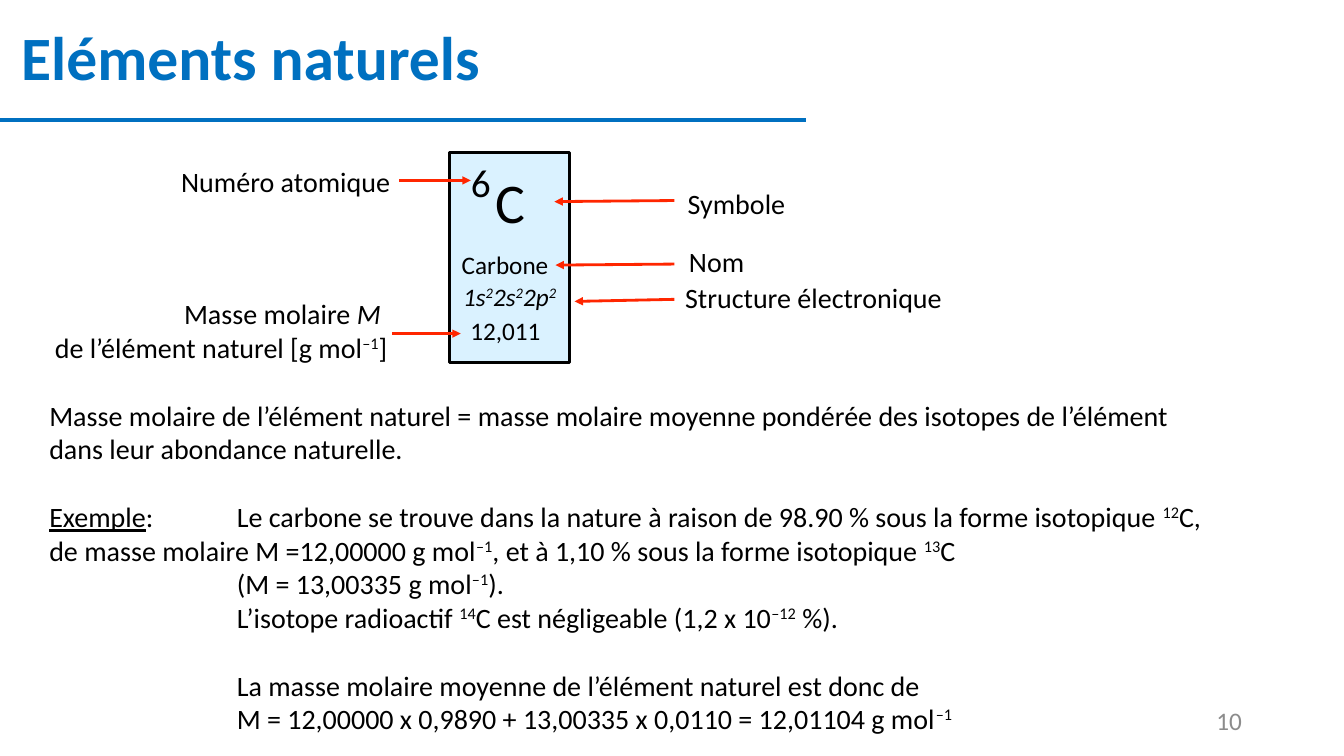
from dataclasses import dataclass

from lxml.etree import SubElement
from pptx import Presentation
from pptx.dml.color import RGBColor
from pptx.enum.shapes import MSO_CONNECTOR as Connector, MSO_SHAPE as Preset
from pptx.enum.text import MSO_ANCHOR as Anchor, MSO_AUTO_SIZE as AutoSize, PP_ALIGN as Align
from pptx.oxml.ns import qn
from pptx.util import Inches, Pt

FONT = "Calibri"
COLORS = {"blue": "0070C0", "black": "000000", "gray": "8C8C8C",
          "tile": "C8ECFF", "red": "FF2600"}
WIDTH, HEIGHT = Inches(13.333), Inches(7.5)
TAB_STOP = Inches(1.86)
LINE_GAP = Pt(24.4)  # height of one 20-point line


# Places are percentages of the slide's width and height.
@dataclass(frozen=True)
class Box:
    left: float
    top: float
    width: float
    height: float

    def lengths(self) -> tuple[int, int, int, int]:
        return across(self.left), down(self.top), across(self.width), down(self.height)


@dataclass(frozen=True)
class Label:
    text: str
    box: Box
    size: int = 20
    align: Align = Align.CENTER
    italic: bool = False
    wrap: bool = True


@dataclass(frozen=True)
class Arrow:
    tip: tuple[float, float]
    tail: tuple[float, float]


def across(percent: float) -> int:
    return round(WIDTH * percent / 100)


def down(percent: float) -> int:
    return round(HEIGHT * percent / 100)


def color(name: str) -> RGBColor:
    return RGBColor.from_string(COLORS[name])


def write_text(paragraph, text: str, *, size: int = 20, color_name: str = "black",
               align: Align = Align.LEFT, bold: bool = False, italic: bool = False) -> None:
    """Parts are split by |; a leading ^ raises, / slants, ~ underlines; \\v breaks the line."""
    paragraph.alignment = align
    for part in text.split("|"):
        if part == "\v":
            paragraph.add_line_break()
            continue
        mark = part[0] if part[0] in "^/~" else ""
        run = paragraph.add_run()
        run.text = part[len(mark):]
        font = run.font
        font.name, font.size, font.bold = FONT, Pt(size), bold
        font.italic = italic or mark == "/"
        font.underline = mark == "~"
        font.color.rgb = color(color_name)
        if mark == "^":
            run._r.get_or_add_rPr().set("baseline", "31000")


def add_frame(slide, box: Box, *, inset: float | None = None, wrap: bool = True,
              anchor: Anchor = Anchor.MIDDLE):
    frame = slide.shapes.add_textbox(*box.lengths()).text_frame
    frame.word_wrap = wrap
    frame.auto_size = AutoSize.SHAPE_TO_FIT_TEXT
    frame.vertical_anchor = anchor
    if inset is not None:
        frame.margin_left = frame.margin_right = Inches(inset)
        frame.margin_top = frame.margin_bottom = Inches(inset)
    return frame


def add_label(slide, label: Label) -> None:
    frame = add_frame(slide, label.box, inset=0.06, wrap=label.wrap)
    write_text(frame.paragraphs[0], label.text, size=label.size,
               align=label.align, italic=label.italic)


def add_line(slide, start: tuple[float, float], end: tuple[float, float], *,
             color_name: str, weight: float, arrow: bool = False) -> None:
    line = slide.shapes.add_connector(Connector.STRAIGHT, across(start[0]), down(start[1]),
                                      across(end[0]), down(end[1]))
    line.line.color.rgb = color(color_name)
    line.line.width = Pt(weight)
    if arrow:
        SubElement(line.line._get_or_add_ln(), qn("a:headEnd"), type="triangle")
    SubElement(line._element.spPr, qn("a:effectLst"))


def add_tile(slide, box: Box) -> None:
    tile = slide.shapes.add_shape(Preset.RECTANGLE, *box.lengths())
    tile.shadow.inherit = False
    tile.fill.solid()
    tile.fill.fore_color.rgb = color("tile")
    fill_color = tile._element.spPr.find(qn("a:solidFill")).find(qn("a:srgbClr"))
    SubElement(fill_color, qn("a:alpha"), val="66000")
    tile.line.color.rgb = color("black")
    tile.line.width = Pt(2)


def add_explanation(slide, box: Box, blocks: list[list[str]]) -> None:
    frame = add_frame(slide, box, anchor=Anchor.TOP)
    paragraph = frame.paragraphs[0]
    for block in blocks:
        for text in block:
            if paragraph.runs:
                paragraph = frame.add_paragraph()
            write_text(paragraph, text)
            if "\t" in text:
                tabs = SubElement(paragraph._p.get_or_add_pPr(), qn("a:tabLst"))
                SubElement(tabs, qn("a:tab"), pos=str(TAB_STOP), algn="l")
        if block is not blocks[-1]:
            paragraph.space_after = LINE_GAP


LABELS = [
    # Inside the tile
    Label("C", Box(36.45, 21.33, 3.08, 10.53), size=40, wrap=False),
    Label("6", Box(34.58, 20.13, 2.33, 7.73), size=28, wrap=False),
    Label("12,011", Box(34.5, 40.93, 6.23, 5.6), size=18, wrap=False),
    Label("Carbone", Box(33.9, 32.13, 7.35, 5.6), size=18, wrap=False),
    Label("1s|^2|2s|^2|2p|^2", Box(33.83, 36.4, 8.18, 5.6), size=18, italic=True, wrap=False),
    # Around the tile
    Label("Numéro atomique", Box(12, 20.93, 17.48, 6), align=Align.RIGHT),
    Label("Masse molaire |/M |\v|de l’élément naturel [g mol|^–1|]",
          Box(2.93, 38.4, 26.33, 10.53), align=Align.RIGHT),
    Label("Symbole", Box(50.48, 23.87, 8.63, 6)),
    Label("Nom", Box(50.7, 31.6, 5.25, 6)),
    Label("Structure électronique", Box(49.88, 36.27, 21.3, 6)),
]
ARROWS = [
    Arrow((34.28, 44.13), (29.18, 44.13)),
    Arrow((35.03, 23.87), (29.7, 23.87)),
    Arrow((41.25, 26.67), (50.18, 26.53)),
    Arrow((41.33, 35.07), (50.18, 34.93)),
    Arrow((42.75, 39.87), (50.18, 39.6)),
]
EXPLANATION = [
    ["Masse molaire de l’élément naturel = masse molaire moyenne pondérée des isotopes "
     "de l’élément dans leur abondance naturelle."],
    ["~Exemple|:\tLe carbone se trouve dans la nature à raison de 98.90 % sous la forme "
     "isotopique |^12|C, \tde masse molaire M =12,00000 g mol|^–1|, et à 1,10 % sous la "
     "forme isotopique |^13|C",
     "\t(M = 13,00335 g mol|^–1|).",
     "\tL’isotope radioactif |^14|C est négligeable (1,2 x 10|^–12| %)."],
    ["\tLa masse molaire moyenne de l’élément naturel est donc de",
     "\tM = 12,00000 x 0,9890 + 13,00335 x 0,0110 = 12,01104 g mol|^–1"],
]


def main() -> None:
    presentation = Presentation()
    presentation.slide_width, presentation.slide_height = WIDTH, HEIGHT
    slide = presentation.slides.add_slide(presentation.slide_layouts[5])

    # Title and its rule
    title = slide.shapes.title
    title.left, title.top, title.width, title.height = Box(0.83, 1.73, 86.25, 12.67).lengths()
    title.text_frame.vertical_anchor = Anchor.MIDDLE
    heading = title.text_frame.paragraphs[0]
    heading.line_spacing = 0.9
    write_text(heading, "Eléments naturels", size=44, color_name="blue", bold=True)
    add_line(slide, (0, 15.87), (60, 15.87), color_name="blue", weight=2.25)

    # Element tile with labels and arrows
    add_tile(slide, Box(33.45, 20.13, 8.93, 27.87))
    for label in LABELS:
        add_label(slide, label)
    for arrow in ARROWS:
        add_line(slide, arrow.tip, arrow.tail, color_name="red", weight=2, arrow=True)

    # Explanation and slide number
    add_explanation(slide, Box(2.93, 52, 88.73, 46.27), EXPLANATION)
    number = add_frame(slide, Box(70.65, 92.67, 22.5, 5.33))
    write_text(number.paragraphs[0], "10", size=18, color_name="gray", align=Align.RIGHT)

    presentation.save("out.pptx")


if __name__ == "__main__":
    main()
